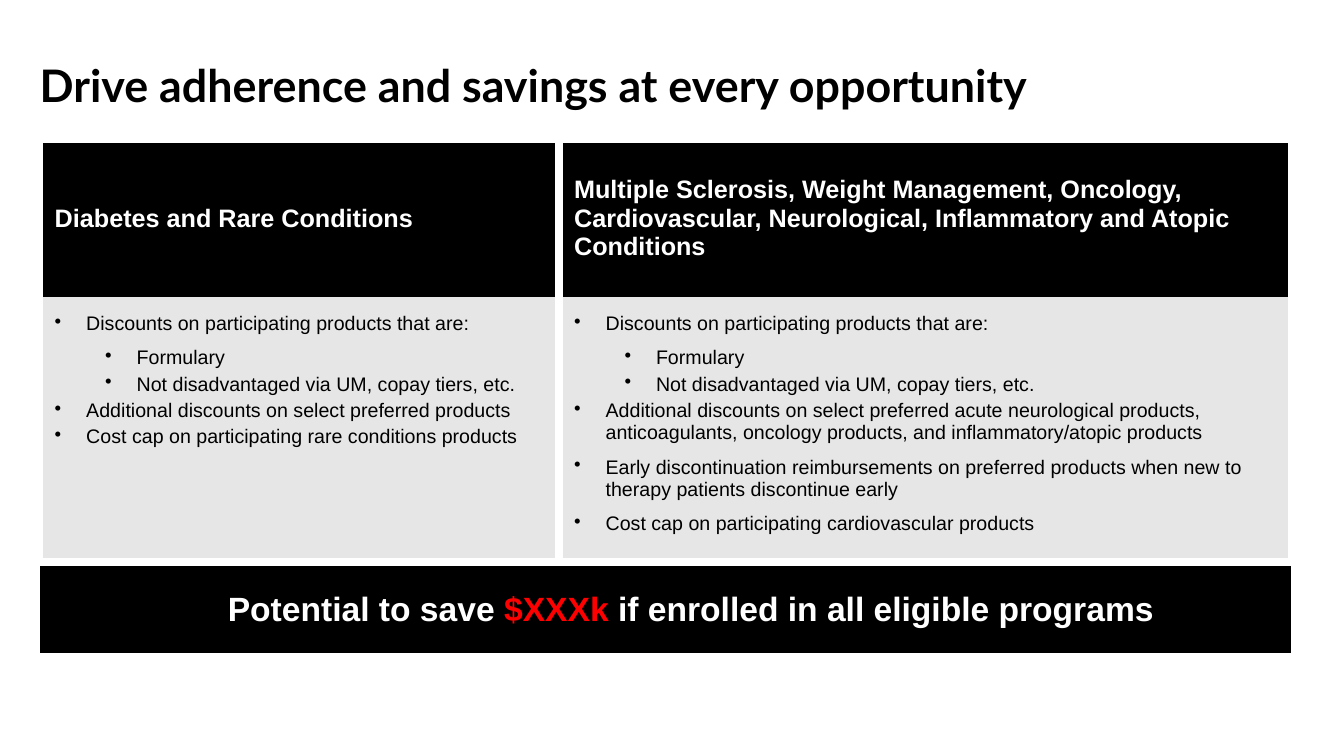
from dataclasses import dataclass

from lxml import etree
from pptx import Presentation
from pptx.dml.color import RGBColor
from pptx.enum import text
from pptx.oxml import ns
from pptx.util import Pt


@dataclass(frozen=True)
class Theme:
    black: str = "000000"
    white: str = "FFFFFF"
    grey: str = "E7E6E6"
    red: str = "FF0000"
    title_font: str = "Lato"
    body_font: str = "Arial"
    title_size: int = 32
    header_size: int = 18
    body_size: int = 14
    banner_size: int = 24
    gap: int = 6
    inset: float = 10.8


THEME = Theme()
TITLE = "Drive adherence and savings at every opportunity"
# Each programme: heading, then (level, space after, wording)
SHARED_POINTS = [
    (0, 6, "Discounts on participating products that are:"),
    (1, 0, "Formulary"),
    (1, 0, "Not disadvantaged via UM, copay tiers, etc."),
]
PROGRAMS = [
    ("Diabetes and Rare Conditions", SHARED_POINTS + [
        (0, 0, "Additional discounts on select preferred products"),
        (0, 0, "Cost cap on participating rare conditions products"),
    ]),
    ("Multiple Sclerosis, Weight Management, Oncology, Cardiovascular, "
     "Neurological, Inflammatory and Atopic Conditions", SHARED_POINTS + [
         (0, 6, "Additional discounts on select preferred acute neurological products, "
                "anticoagulants, oncology products, and inflammatory/atopic products"),
         (0, 6, "Early discontinuation reimbursements on preferred products when new to "
                "therapy patients discontinue early"),
         (0, 6, "Cost cap on participating cardiovascular products"),
     ]),
]
BANNER = [("Potential to save ", THEME.white), ("$XXXk ", THEME.red),
          ("if enrolled in all eligible programs", THEME.white)]


def style(span, size, color, bold=False, font=THEME.body_font):
    span.font.name = font
    span.font.size = Pt(size)
    span.font.bold = bold
    span.font.color.rgb = RGBColor.from_string(color)


def set_indent(para, left, first=0):
    props = para._p.get_or_add_pPr()
    props.set("marL", str(Pt(left)))
    props.set("indent", str(Pt(first)))
    return props


def add_bullet(para, left, hanging):
    props = set_indent(para, left, -hanging)
    color = etree.SubElement(props, ns.qn("a:buClr"))
    etree.SubElement(color, ns.qn("a:srgbClr"), val=THEME.black)
    etree.SubElement(props, ns.qn("a:buChar"), char="•")


def set_borders(cell, left, right, top, bottom):
    """White borders of the given widths; zero means no line."""
    props = cell._tc.get_or_add_tcPr()
    sides = zip(("lnL", "lnR", "lnT", "lnB"), (left, right, top, bottom))
    for position, (side, width) in enumerate(sides):
        line = etree.Element(ns.qn("a:" + side), w=str(Pt(width)))
        if width:
            fill = etree.SubElement(line, ns.qn("a:solidFill"))
            etree.SubElement(fill, ns.qn("a:srgbClr"), val=THEME.white)
        else:
            etree.SubElement(line, ns.qn("a:noFill"))
        props.insert(position, line)


def prepare_cell(cell, fill, anchor, borders):
    cell.fill.solid()
    cell.fill.fore_color.rgb = RGBColor.from_string(fill)
    cell.vertical_anchor = anchor
    cell.margin_left = cell.margin_right = Pt(THEME.inset)
    cell.margin_top = cell.margin_bottom = Pt(THEME.inset)
    set_borders(cell, *borders)


def add_title(page, left, top, width, height):
    frame = page.shapes.add_textbox(Pt(left), Pt(top), Pt(width), Pt(height)).text_frame
    frame.word_wrap = True
    frame.margin_left = frame.margin_right = frame.margin_top = frame.margin_bottom = 0
    frame.text = TITLE
    style(frame.paragraphs[0].runs[0], THEME.title_size, THEME.black, True, THEME.title_font)


def fill_header(cell, heading):
    prepare_cell(cell, THEME.black, text.MSO_ANCHOR.MIDDLE, (THEME.gap, THEME.gap, THEME.gap, 0))
    cell.text_frame.text = heading
    style(cell.text_frame.paragraphs[0].runs[0], THEME.header_size, THEME.white, True)


def fill_points(cell, points):
    prepare_cell(cell, THEME.grey, text.MSO_ANCHOR.TOP, (THEME.gap, THEME.gap, 0, THEME.gap))
    frame = cell.text_frame
    for number, (level, after, wording) in enumerate(points):
        para = frame.add_paragraph() if number else frame.paragraphs[0]
        para.text = wording
        para.level = level
        para.space_before = Pt(3 if number else 0)
        para.space_after = Pt(after)
        add_bullet(para, 22.5 + 36 * level, 22.5)
        style(para.runs[0], THEME.body_size, THEME.black)


def fill_banner(cell):
    prepare_cell(cell, THEME.black, text.MSO_ANCHOR.MIDDLE, (1, 1, THEME.gap, THEME.gap))
    para = cell.text_frame.paragraphs[0]
    para.alignment = text.PP_ALIGN.CENTER
    para.space_after = Pt(6)
    set_indent(para, 36)
    for wording, color in BANNER:
        span = para.add_run()
        span.text = wording
        style(span, THEME.banner_size, color, True)


def add_program_table(page, left, top, widths, heights):
    table = page.shapes.add_table(len(heights), len(widths), Pt(left), Pt(top),
                                  Pt(sum(widths)), Pt(sum(heights))).table
    table.first_row = table.horz_banding = False
    for column, width in zip(table.columns, widths):
        column.width = Pt(width)
    for row, height in zip(table.rows, heights):
        row.height = Pt(height)
    for index, (heading, points) in enumerate(PROGRAMS):
        fill_header(table.cell(0, index), heading)
        fill_points(table.cell(1, index), points)
    # Savings banner across both columns
    table.cell(2, 0).merge(table.cell(2, 1))
    fill_banner(table.cell(2, 0))


def main():
    deck = Presentation()
    deck.slide_width, deck.slide_height = Pt(960), Pt(540)
    page = deck.slides.add_slide(deck.slide_layouts[6])
    add_title(page, 28.3, 41, 771, 79)
    add_program_table(page, 28.3, 99.4, (371, 523.4), (113, 179.3, 67.7))
    deck.save("out.pptx")


if __name__ == "__main__":
    main()
